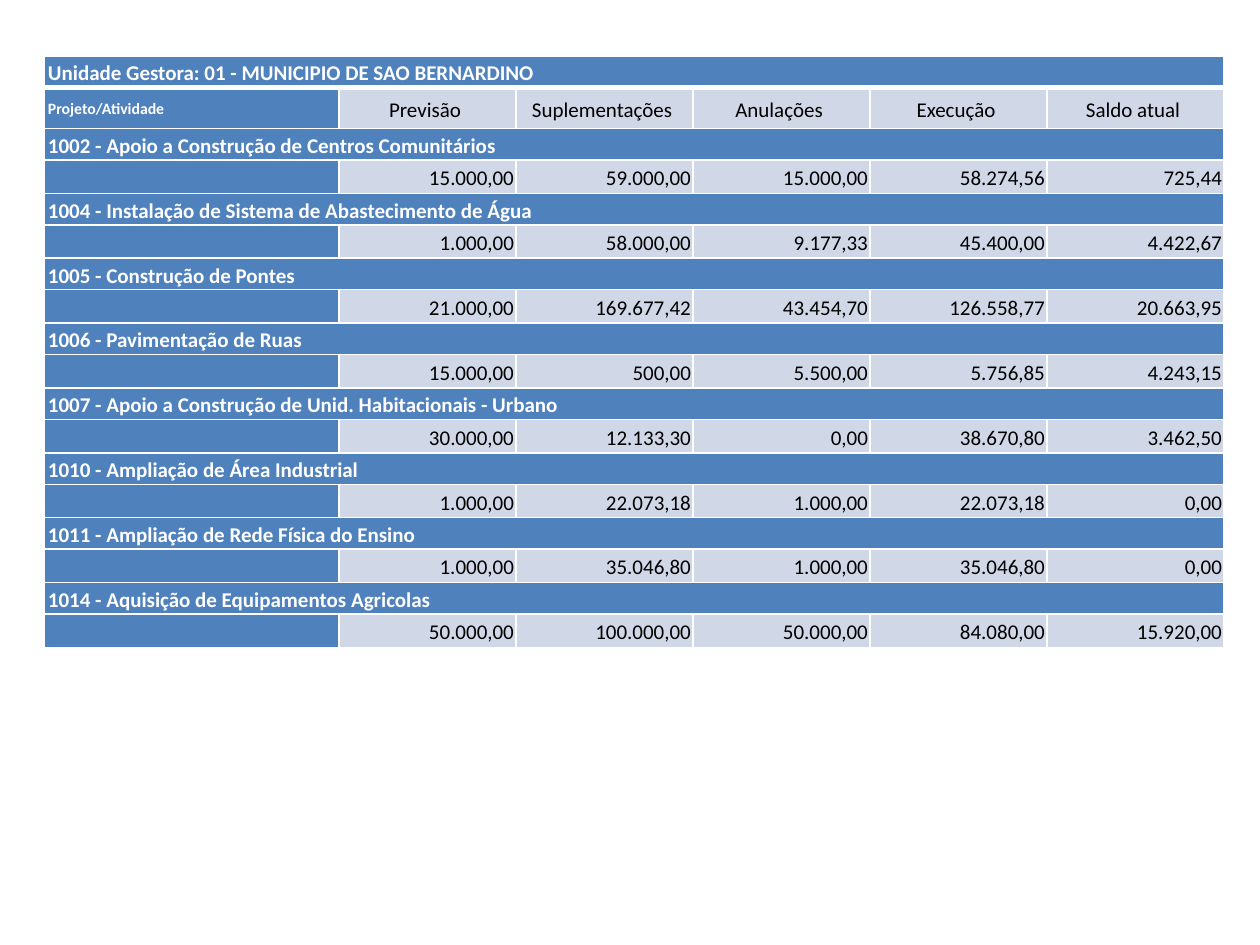
from dataclasses import dataclass

from lxml import etree
from pptx import Presentation
from pptx import util as u
from pptx.dml.color import RGBColor
from pptx.enum import text
from pptx.oxml.ns import qn

EMU_PER_PX = 914400 / 126
BLUE, PALE, WHITE, BLACK = "4F81BD", "D0D8E8", "FFFFFF", "000000"

TABLE_LEFT, TABLE_TOP, TABLE_HEIGHT = 44, 56, 582
LABEL_WIDTH, VALUE_WIDTH = 295, 177
BAND_HEIGHT, HEADER_HEIGHT, VALUES_HEIGHT = 21, 41, 25


@dataclass(frozen=True)
class CellStyle:
    fill: str
    color: str
    bold: bool = False
    size: int = 12
    align: text.PP_ALIGN = text.PP_ALIGN.LEFT
    margin_x: int = 4
    margin_y: int = 1


@dataclass(frozen=True)
class Project:
    name: str
    values: tuple[str, ...]


BAND = CellStyle(BLUE, WHITE, bold=True)
CORNER = CellStyle(BLUE, WHITE, bold=True, size=9)
HEADING = CellStyle(PALE, BLACK, align=text.PP_ALIGN.CENTER)
VALUE = CellStyle(PALE, BLACK, align=text.PP_ALIGN.RIGHT, margin_x=2, margin_y=2)

TITLE = "Unidade Gestora: 01 - MUNICIPIO DE SAO BERNARDINO"
HEADINGS = ("Previsão ", "Suplementações ", "Anulações ", "Execução ", "Saldo atual ")
PROJECTS = (
    Project("1002 - Apoio a Construção de Centros Comunitários",
            ("15.000,00", "59.000,00", "15.000,00", "58.274,56", "725,44")),
    Project("1004 - Instalação de Sistema de Abastecimento de Água",
            ("1.000,00", "58.000,00", "9.177,33", "45.400,00", "4.422,67")),
    Project("1005 - Construção de Pontes",
            ("21.000,00", "169.677,42", "43.454,70", "126.558,77", "20.663,95")),
    Project("1006 - Pavimentação de Ruas",
            ("15.000,00", "500,00", "5.500,00", "5.756,85", "4.243,15")),
    Project("1007 - Apoio a Construção de Unid. Habitacionais - Urbano",
            ("30.000,00", "12.133,30", "0,00", "38.670,80", "3.462,50")),
    Project("1010 - Ampliação de Área Industrial",
            ("1.000,00", "22.073,18", "1.000,00", "22.073,18", "0,00")),
    Project("1011 - Ampliação de Rede Física do Ensino",
            ("1.000,00", "35.046,80", "1.000,00", "35.046,80", "0,00")),
    Project("1014 - Aquisição de Equipamentos Agricolas",
            ("50.000,00", "100.000,00", "50.000,00", "84.080,00", "15.920,00")),
)


def px(length: int) -> u.Emu:
    return u.Emu(round(length * EMU_PER_PX))


def rgb(color: str) -> RGBColor:
    return RGBColor.from_string(color)


def set_borders(cell, top: int = 1, bottom: int = 1) -> None:
    """Draw white borders, with widths in points; call before filling the cell."""
    properties = cell._tc.get_or_add_tcPr()
    for tag, width in (("lnL", 1), ("lnR", 1), ("lnT", top), ("lnB", bottom)):
        line = etree.SubElement(properties, qn(f"a:{tag}"), w=str(u.Pt(width)))
        fill = etree.SubElement(line, qn("a:solidFill"))
        etree.SubElement(fill, qn("a:srgbClr"), val=WHITE)


def style_cell(cell, content: str, style: CellStyle) -> None:
    cell.fill.solid()
    cell.fill.fore_color.rgb = rgb(style.fill)
    cell.margin_left = cell.margin_right = px(style.margin_x)
    cell.margin_top = cell.margin_bottom = px(style.margin_y)
    cell.vertical_anchor = text.MSO_ANCHOR.MIDDLE
    paragraph = cell.text_frame.paragraphs[0]
    paragraph.alignment = style.align
    paragraph.line_spacing = 1.15
    if not content:
        # An empty cell would otherwise take its row height from 18 pt text.
        etree.SubElement(paragraph._p, qn("a:endParaRPr"), sz=str(style.size * 100))
        return
    paragraph.text = content
    font = paragraph.runs[0].font
    font.name = "Calibri"
    font.size = u.Pt(style.size)
    font.bold = style.bold
    font.color.rgb = rgb(style.color)


def fill_band(table, row: int, content: str) -> None:
    """Merge a whole row into one blue heading."""
    table.cell(row, 0).merge(table.cell(row, len(table.columns) - 1))
    style_cell(table.cell(row, 0), content, BAND)


def fill_row(table, row: int, label: str, label_style: CellStyle,
             values: tuple[str, ...], value_style: CellStyle) -> None:
    style_cell(table.cell(row, 0), label, label_style)
    for column, value in enumerate(values, start=1):
        style_cell(table.cell(row, column), value, value_style)


def add_budget_table(slide) -> None:
    widths = [LABEL_WIDTH] + [VALUE_WIDTH] * len(HEADINGS)
    heights = [BAND_HEIGHT, HEADER_HEIGHT] + [BAND_HEIGHT, VALUES_HEIGHT] * len(PROJECTS)
    frame = slide.shapes.add_table(
        len(heights), len(widths), px(TABLE_LEFT), px(TABLE_TOP),
        px(sum(widths)), px(TABLE_HEIGHT))
    table = frame.table
    table.first_row = table.horz_banding = False
    for column, width in zip(table.columns, widths):
        column.width = px(width)
    for index, (row, height) in enumerate(zip(table.rows, heights)):
        row.height = px(height)
        for cell in row.cells:
            set_borders(cell, top=3 if index == 1 else 1, bottom=3 if index == 0 else 1)
    frame.height = px(TABLE_HEIGHT)

    fill_band(table, 0, TITLE)
    fill_row(table, 1, "Projeto/Atividade", CORNER, HEADINGS, HEADING)
    for index, project in enumerate(PROJECTS):
        row = 2 + 2 * index
        fill_band(table, row, project.name)
        fill_row(table, row + 1, "", BAND, project.values, VALUE)


def main() -> None:
    presentation = Presentation()
    presentation.slide_width, presentation.slide_height = px(1260), px(945)
    slide = presentation.slides.add_slide(presentation.slide_layouts[6])
    add_budget_table(slide)
    presentation.save("out.pptx")


if __name__ == "__main__":
    main()
